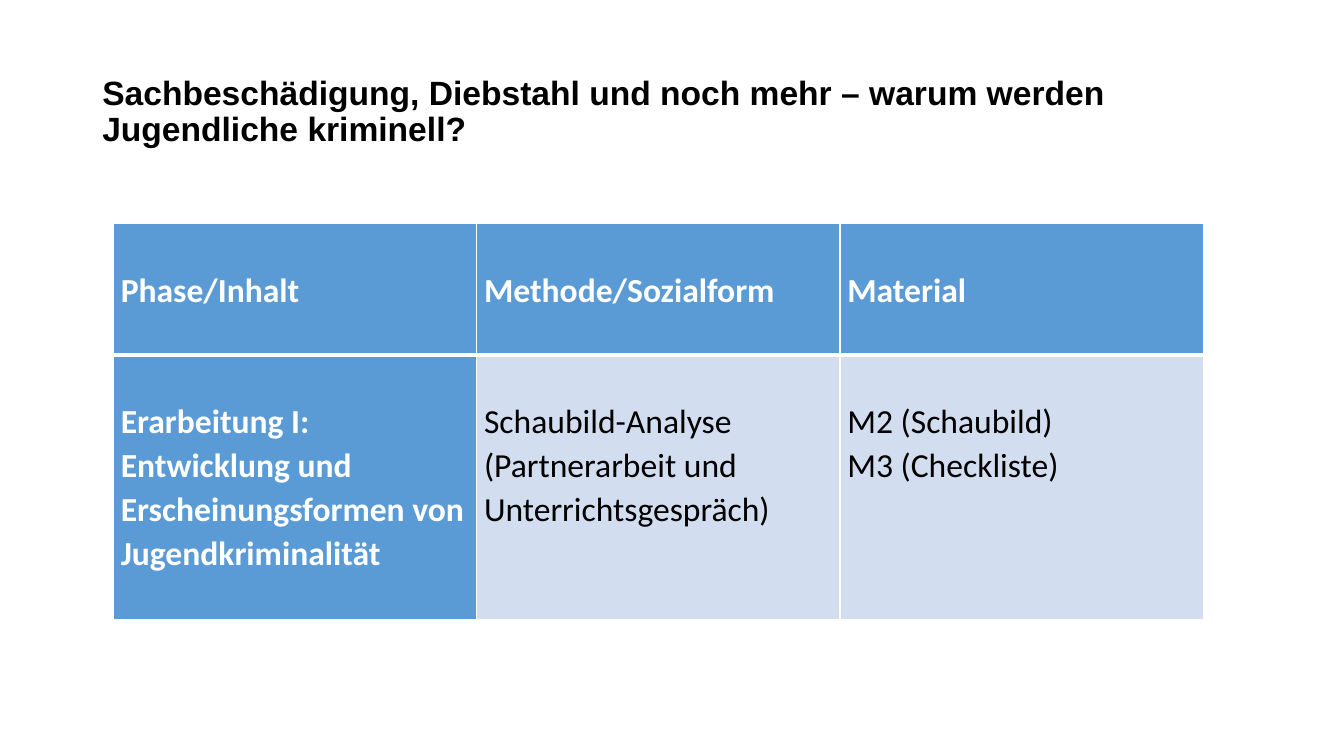
from dataclasses import dataclass

from lxml.etree import SubElement as Sub
from pptx import Presentation
from pptx.dml.color import RGBColor as RGB
from pptx.enum.text import MSO_ANCHOR as Anchor
from pptx.oxml.ns import qn
from pptx.util import Pt

PX = 9525


@dataclass(frozen=True)
class Theme:
    black: str = "000000"
    white: str = "FFFFFF"
    blue: str = "5B9BD5"
    pale: str = "D2DEEF"
    head: str = "Arial"
    body: str = "Calibri"
    size: int = 24
    thin: int = 1
    thick: int = 3


THEME = Theme()
ROWS = [
    [["Phase/Inhalt"], ["Methode/Sozialform"], ["Material"]],
    [
        ["Erarbeitung I:", "Entwicklung und Erscheinungsformen von Jugendkriminalität"],
        ["Schaubild-Analyse", "(Partnerarbeit und Unterrichtsgespräch)"],
        ["M2 (Schaubild)", "M3 (Checkliste)"],
    ],
]


def px(num):
    """Turn pixels into EMU."""
    return num * PX


def write(frame, lines, font=THEME.body, color=THEME.black, bold=False, space=1.07):
    """Fill a text frame with one paragraph per line."""
    frame.word_wrap = True
    for i, line in enumerate(lines):
        para = frame.paragraphs[0] if i == 0 else frame.add_paragraph()
        para.line_spacing = space
        run = para.add_run()
        run.text = line
        run.font.name = font
        run.font.size = Pt(THEME.size)
        run.font.bold = bold
        run.font.color.rgb = RGB.from_string(color)


def border(cell, **sides):
    """Draw white cell borders of the given point widths."""
    props = cell._tc.get_or_add_tcPr()
    for side, width in sides.items():
        line = Sub(props, qn(f"a:ln{side}"), w=str(Pt(width)))
        fill = Sub(line, qn("a:solidFill"))
        Sub(fill, qn("a:srgbClr"), val=THEME.white)


def title(slide, text):
    """Add the heading."""
    box = slide.shapes.add_textbox(px(88), px(38), px(1104), px(139))
    box.text_frame.vertical_anchor = Anchor.MIDDLE
    write(box.text_frame, [text], font=THEME.head, bold=True, space=0.9)


def paint(cell, lines, top, first):
    """Format one table cell and write its lines."""
    strong = top or first
    cell.margin_left = cell.margin_right = px(7)
    cell.margin_top, cell.margin_bottom = px(42), 0
    border(
        cell,
        L=THEME.thin,
        R=THEME.thin,
        T=THEME.thin if top else THEME.thick,
        B=THEME.thick if top else THEME.thin,
    )
    cell.fill.solid()
    cell.fill.fore_color.rgb = RGB.from_string(THEME.blue if strong else THEME.pale)
    color = THEME.white if strong else THEME.black
    write(cell.text_frame, lines, color=color, bold=strong)


def grid(slide, rows, wide=346, highs=(125, 252)):
    """Add the lesson table."""
    cols = len(rows[0])
    frame = slide.shapes.add_table(
        len(rows), cols, px(108), px(213), px(wide * cols), px(sum(highs))
    )
    table = frame.table
    for col in table.columns:
        col.width = px(wide)
    for r, (row, high) in enumerate(zip(rows, highs)):
        table.rows[r].height = px(high)
        for c, lines in enumerate(row):
            paint(table.cell(r, c), lines, top=r == 0, first=c == 0)


def main():
    """Build and save the slide."""
    deck = Presentation()
    deck.slide_width, deck.slide_height = px(1280), px(720)
    slide = deck.slides.add_slide(deck.slide_layouts[6])
    title(
        slide,
        "Sachbeschädigung, Diebstahl und noch mehr – warum werden Jugendliche kriminell?",
    )
    grid(slide, ROWS)
    deck.save("out.pptx")


if __name__ == "__main__":
    main()
